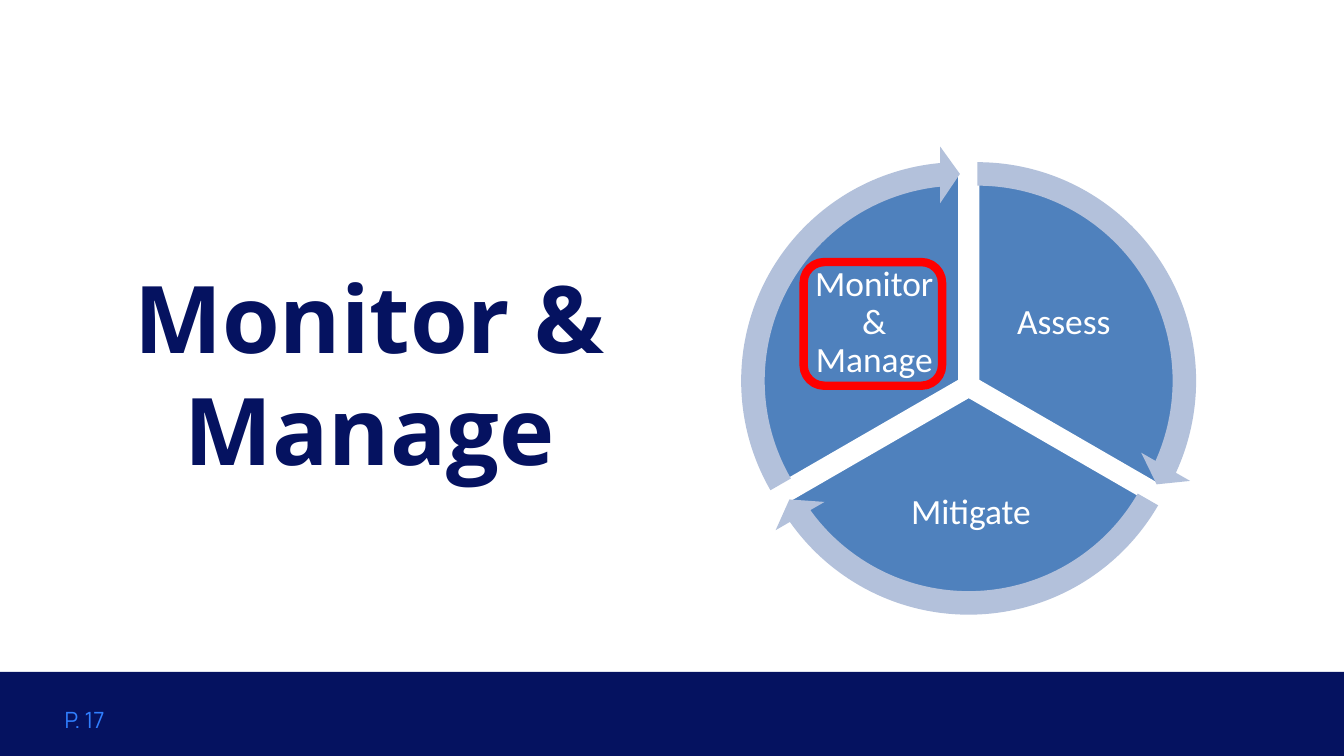
"""Build the Monitor & Manage slide with its three-step risk cycle."""
import math

import pptx
import pptx.dml.color
import pptx.enum.shapes
import pptx.enum.text
import pptx.util

CELL = pptx.util.Inches(0.1)
COLUMNS, ROWS = 100, 56.25
NAVY, WHITE = "051260", "FFFFFF"
HUB = (72.08, 28.72)
SPREAD = 0.75
PIE_SIZE, ARROW_SIZE = 31.2, 35
FULL_TURN, ARROW_HEAD = 216, 3.28
STEPS = [
    ("Assess", 162, 18, (73.6, 19.4, 11.1, 9.3)),
    ("Mitigate", 18, 90, (63.9, 34.1, 16.7, 8.2)),
    ("Monitor & Manage", 90, 162, (59.5, 19.4, 11.1, 9.3)),
]
Shape = pptx.enum.shapes.MSO_SHAPE
Anchor = pptx.enum.text.MSO_ANCHOR
Align = pptx.enum.text.PP_ALIGN


def color(value):
    """Turn a hex string into a color."""
    return pptx.dml.color.RGBColor.from_string(value)


def place(area):
    """Turn grid columns and rows into slide lengths."""
    return [round(cells * CELL) for cells in area]


def add_shape(page, kind, area, fill=None, line=None, width=0, adjust=()):
    """Add a flat preset shape."""
    shape = page.shapes.add_shape(kind, *place(area))
    shape.shadow.inherit = False
    for index, value in enumerate(adjust):
        shape.adjustments[index] = value
    if fill:
        shape.fill.solid()
        shape.fill.fore_color.rgb = color(fill)
    else:
        shape.fill.background()
    if line:
        shape.line.color.rgb = color(line)
        shape.line.width = pptx.util.Pt(width)
    else:
        shape.line.fill.background()
    return shape


def write(box, text, size, font, ink, align=Align.CENTER, spacing=1.0, bold=False):
    """Fill a box with one formatted, vertically centered paragraph."""
    frame = box.text_frame
    frame.word_wrap = True
    frame.auto_size = pptx.enum.text.MSO_AUTO_SIZE.NONE
    frame.vertical_anchor = Anchor.MIDDLE
    para = frame.paragraphs[0]
    para.text = text
    para.alignment = align
    para.line_spacing = spacing
    para.font.size = pptx.util.Pt(size)
    para.font.name = font
    para.font.bold = bold
    para.font.color.rgb = color(ink)


def add_heading(page, text, area):
    """Move and fill the title placeholder."""
    title = page.shapes.title
    title.left, title.top, title.width, title.height = place(area)
    write(title, text, 50, "Open Sans", NAVY, bold=True)
    title.text_frame.margin_bottom = pptx.util.Inches(0.26)


def add_label(page, text, area):
    """Add the label of a cycle step."""
    box = page.shapes.add_textbox(*place(area))
    write(box, text, 19, "Calibri", WHITE, spacing=0.9)
    frame = box.text_frame
    frame.margin_left = frame.margin_right = pptx.util.Inches(0.03)
    frame.margin_top = frame.margin_bottom = pptx.util.Inches(0.03)


def step_area(start, end, size):
    """Give the square of a step, pushed outward from the hub."""
    middle = start + (end - start) % FULL_TURN / 2
    angle = math.tau * middle / FULL_TURN
    left = HUB[0] + SPREAD * math.cos(angle) - size / 2
    top = HUB[1] + SPREAD * math.sin(angle) - size / 2
    return left, top, size, size


def add_cycle(page):
    """Add the wedges with their labels, then the arrows around them."""
    for text, start, end, label_area in STEPS:
        area = step_area(start, end, PIE_SIZE)
        add_shape(page, Shape.PIE, area, "4F81BD", WHITE, 2, (start, end))
        add_label(page, text, label_area)
    for text, start, end, label_area in STEPS:
        area = step_area(start, end, ARROW_SIZE)
        adjust = (0.05, ARROW_HEAD, end - ARROW_HEAD, start, 0.06)
        add_shape(page, Shape.CIRCULAR_ARROW, area, "B3C1DB", adjust=adjust)


def add_footer(page):
    """Add the bottom band and the page number."""
    add_shape(page, Shape.RECTANGLE, (0, 50, COLUMNS, ROWS - 50), NAVY)
    box = page.shapes.add_textbox(*place((3.83, 52.05, 23.3, 3)))
    write(box, "P. 17", 12, "Manrope", "307FFF", Align.LEFT)


def main():
    """Build and save the deck."""
    deck = pptx.Presentation()
    deck.slide_width, deck.slide_height = place((COLUMNS, ROWS))
    page = deck.slides.add_slide(deck.slide_layouts.get_by_name("Title Only"))
    add_footer(page)
    add_heading(page, "Monitor & Manage", (5, 9.1, 45, 39.3))
    add_cycle(page)
    add_shape(page, Shape.ROUNDED_RECTANGLE, (59.8, 19.5, 10.3, 9.2), line="FF0000", width=4.5)
    deck.save("out.pptx")


if __name__ == "__main__":
    main()
